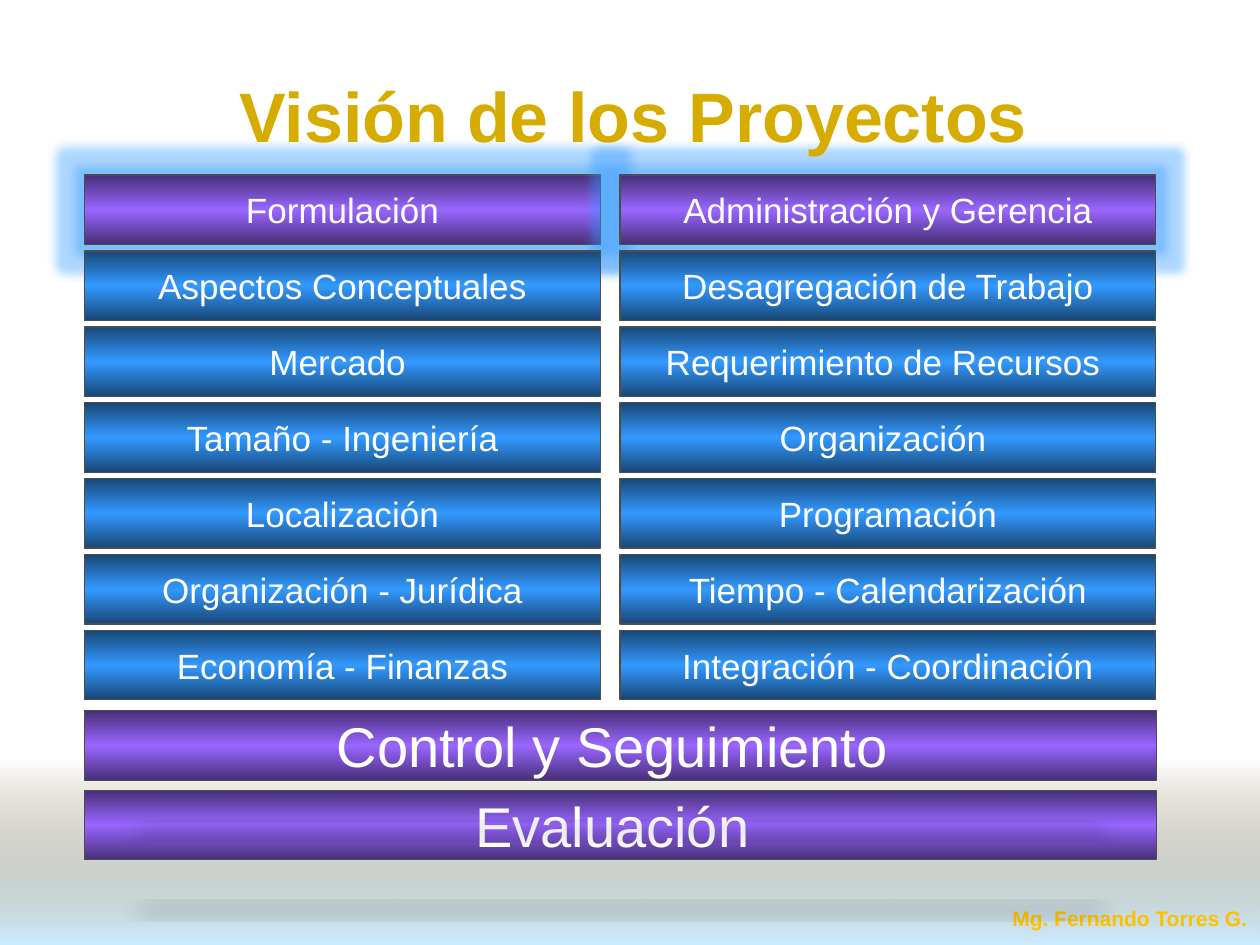
"""Build the slide on the stages of a project."""
from dataclasses import dataclass

from lxml.etree import SubElement
from pptx import Presentation
from pptx.dml.color import RGBColor
from pptx.enum.shapes import MSO_SHAPE
from pptx.enum.text import MSO_ANCHOR, MSO_AUTO_SIZE, PP_ALIGN
from pptx.oxml.ns import qn
from pptx.util import Cm, Pt

PURPLE = [(0, "472F76", 100), (50, "9966FF", 100), (100, "472F76", 100)]
BLUE = [(0, "184776", 100), (50, "3399FF", 100), (100, "184776", 100)]
GOLD = [(0, "977900", 100), (50, "D7AC00", 100), (100, "FFCC00", 100)]
MIST = [(0, "765E2F", 0), (100, "CCECFF", 100)]
TOP, STEP, HIGH = 3.53, 1.53, 1.4
LEFT, WIDE = 1.7, 21.61


@dataclass
class Column:
    left: float
    width: float
    head: str
    rows: list[str]


@dataclass
class Stage:
    top: float
    label: str


COLUMNS = [
    Column(LEFT, 10.41, "Formulación", [
        "Aspectos Conceptuales", "Mercado ", "Tamaño - Ingeniería",
        "Localización", "Organización - Jurídica", "Economía - Finanzas"]),
    Column(12.5, 10.8, "Administración y Gerencia", [
        "Desagregación de Trabajo", "Requerimiento de Recursos ",
        "Organización ", "Programación", "Tiempo - Calendarización",
        "Integración - Coordinación"]),
]
FINAL = Stage(15.93, "Evaluación ")
CONTROL = Stage(14.33, "Control y Seguimiento ")


def tint(code: str) -> RGBColor:
    return RGBColor.from_string(code)


def add_color(node, code: str, alpha: int = 100) -> None:
    color = SubElement(node, qn("a:srgbClr"), val=str(tint(code)))
    if alpha < 100:
        SubElement(color, qn("a:alpha"), val=str(alpha * 1000))


def add_blend(node, stops: list, angle: int = 90) -> None:
    blend = SubElement(node, qn("a:gradFill"), rotWithShape="1")
    items = SubElement(blend, qn("a:gsLst"))
    for place, code, alpha in stops:
        stop = SubElement(items, qn("a:gs"), pos=str(place * 1000))
        add_color(stop, code, alpha)
    SubElement(blend, qn("a:lin"), ang=str(angle * 60000), scaled="0")


def add_block(slide, left: float, top: float, width: float, height: float,
              stops: list):
    block = slide.shapes.add_shape(
        MSO_SHAPE.RECTANGLE, Cm(left), Cm(top), Cm(width), Cm(height))
    add_blend(block._element.spPr, stops)
    block.line.fill.background()
    block.shadow.inherit = False
    return block


def add_bar(slide, left: float, top: float, width: float, label: str,
            stops: list, size: int = 20):
    bar = add_block(slide, left, top, width, HIGH, stops)
    bar.line.color.rgb = tint("4D4D4D")
    bar.line.width = Pt(0.75)
    write(bar, label, size, "FFFFFF")
    return bar


def write(shape, label: str, size: int, code: str, bold: bool = False,
          align: PP_ALIGN = PP_ALIGN.CENTER):
    frame = shape.text_frame
    frame.text = label
    frame.word_wrap = False
    frame.vertical_anchor = MSO_ANCHOR.MIDDLE
    line = frame.paragraphs[0]
    line.alignment = align
    font = line.runs[0].font
    font.name, font.size, font.bold = "Arial", Pt(size), bold
    font.color.rgb = tint(code)
    return font


def add_glow(shape) -> None:
    effects = shape._element.spPr.find(qn("a:effectLst"))
    glow = SubElement(effects, qn("a:glow"), rad=str(Pt(11)))
    add_color(glow, "3399FF", 40)


def add_shade(shape) -> None:
    effects = shape._element.spPr.find(qn("a:effectLst"))
    shade = SubElement(
        effects, qn("a:outerShdw"), blurRad=str(Pt(12)), dist=str(Pt(25)),
        dir="5400000", sx="90000", sy="-19000", rotWithShape="0")
    add_color(shade, "000000", 15)


def add_stage(slide, stage: Stage) -> None:
    bar = add_bar(slide, LEFT, stage.top, WIDE, stage.label, PURPLE, 32)
    add_shade(bar)


def add_column(slide, column: Column) -> None:
    for row, label in enumerate(column.rows, 1):
        add_bar(slide, column.left, TOP + row * STEP, column.width, label, BLUE)


def add_title(slide) -> None:
    box = slide.shapes.add_textbox(Cm(4.55), Cm(1.32), Cm(16.43), Cm(1.96))
    font = write(box, "Visión de los Proyectos", 40, "D7AC00", True)
    box.text_frame.auto_size = MSO_AUTO_SIZE.SHAPE_TO_FIT_TEXT
    props = font._element
    solid = props.find(qn("a:solidFill"))
    add_blend(props, GOLD, 0)
    props.replace(solid, props[-1])
    edge = SubElement(props, qn("a:ln"), w=str(Pt(1.5)))
    add_color(SubElement(edge, qn("a:solidFill")), "FFFFFF")
    props.insert(0, edge)


def add_credit(slide) -> None:
    box = slide.shapes.add_textbox(Cm(15.6), Cm(18.14), Cm(9.8), Cm(0.91))
    write(box, "Mg. Fernando Torres G.", 12, "FFC000", True, PP_ALIGN.RIGHT)
    box.text_frame.word_wrap = True
    box.text_frame.vertical_anchor = MSO_ANCHOR.TOP


def main() -> None:
    deck = Presentation()
    deck.slide_width, deck.slide_height = Cm(25.4), Cm(19.05)
    slide = deck.slides.add_slide(deck.slide_layouts[6])
    add_block(slide, 0, 15.32, 25.4, 3.73, MIST)
    add_credit(slide)
    add_stage(slide, FINAL)
    for column in COLUMNS:
        add_glow(add_bar(slide, column.left, TOP, column.width, column.head,
                         PURPLE))
    for column in COLUMNS:
        add_column(slide, column)
    add_stage(slide, CONTROL)
    add_title(slide)
    deck.save("out.pptx")


if __name__ == "__main__":
    main()
